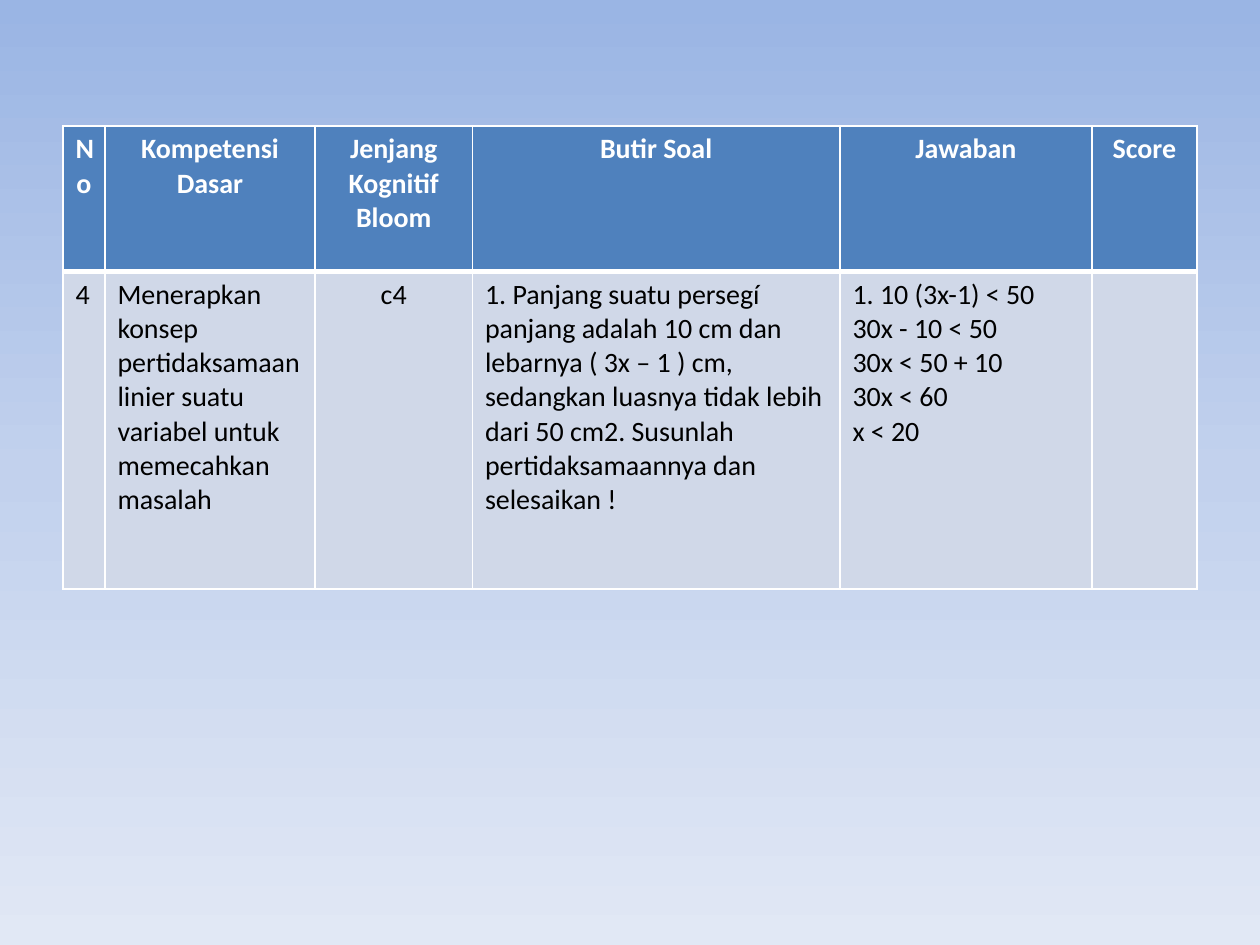
from copy import deepcopy

from lxml import etree
from pptx import Presentation
from pptx.dml.color import RGBColor
from pptx.enum import text
from pptx.oxml import ns
from pptx.util import Pt

WHITE = RGBColor(0xFF, 0xFF, 0xFF)
BLACK = RGBColor(0, 0, 0)
HEADER_BLUE = RGBColor(0x4F, 0x81, 0xBD)
BODY_BLUE = RGBColor(0xD0, 0xD8, 0xE8)
SKY = [
    (0, RGBColor(0x9A, 0xB5, 0xE4)),
    (0.5, RGBColor(0xC2, 0xD1, 0xED)),
    (1, RGBColor(0xE1, 0xE8, 0xF5)),
]

HEADINGS = ["No", "Kompetensi Dasar", "Jenjang Kognitif Bloom",
            "Butir Soal", "Jawaban", "Score"]
QUESTION = [
    "4",
    "Menerapkan konsep pertidaksamaan linier suatu variabel untuk "
    "memecahkan masalah",
    "c4",
    "1. Panjang suatu persegí panjang adalah 10 cm dan lebarnya ( 3x – 1 ) cm,\n"
    "sedangkan luasnya tidak lebih dari 50 cm2. Susunlah pertidaksamaannya dan\n"
    "selesaikan !",
    "1. 10 (3x-1) < 50\n30x - 10 < 50\n30x < 50 + 10\n30x < 60\nx < 20",
    "",
]
BLOOM_COLUMN = 2
COLUMN_WIDTHS = [24, 120, 90, 210, 144, 60]
ROW_HEIGHTS = [83, 181.5]
TABLE_LEFT, TABLE_TOP = 36, 72


def paint_background(slide, stops):
    fill = slide.background.fill
    fill.gradient()
    fill.gradient_angle = 270
    stop_list = slide._element.find(".//" + ns.qn("a:gsLst"))
    while len(stop_list) < len(stops):
        stop_list.append(deepcopy(stop_list[0]))
    for stop, (position, color) in zip(fill.gradient_stops, stops):
        stop.position = position
        stop.color.rgb = color


def draw_borders(cell, color, **widths):
    """Draw the sides L, R, T and B, given in that order, in points."""
    properties = cell._tc.get_or_add_tcPr()
    for side, width in widths.items():
        line = etree.SubElement(properties, ns.qn(f"a:ln{side}"), w=str(Pt(width)))
        solid = etree.SubElement(line, ns.qn("a:solidFill"))
        etree.SubElement(solid, ns.qn("a:srgbClr"), val=str(color))


def write(frame, content, *, color=BLACK, bold=False, centred=False,
          size=16, font="Calibri"):
    frame.text = content
    for paragraph in frame.paragraphs:
        paragraph.alignment = text.PP_ALIGN.CENTER if centred else text.PP_ALIGN.LEFT
        paragraph.font.size = Pt(size)
        for run in paragraph.runs:
            run.font.name = font
            run.font.size = Pt(size)
            run.font.bold = bold
            run.font.color.rgb = color


def add_question_table(slide):
    rows = [HEADINGS, QUESTION]
    table = slide.shapes.add_table(
        len(rows), len(HEADINGS), Pt(TABLE_LEFT), Pt(TABLE_TOP),
        Pt(sum(COLUMN_WIDTHS)), Pt(sum(ROW_HEIGHTS))).table
    for column, width in zip(table.columns, COLUMN_WIDTHS):
        column.width = Pt(width)
    for r, (entries, height) in enumerate(zip(rows, ROW_HEIGHTS)):
        table.rows[r].height = Pt(height)
        header = r == 0
        for c, entry in enumerate(entries):
            cell = table.cell(r, c)
            draw_borders(cell, WHITE, L=1, R=1,
                         T=1 if header else 3, B=3 if header else 1)
            cell.fill.solid()
            cell.fill.fore_color.rgb = HEADER_BLUE if header else BODY_BLUE
            write(cell.text_frame, entry, color=WHITE if header else BLACK,
                  bold=header, centred=header or c == BLOOM_COLUMN)


def main():
    deck = Presentation()
    deck.slide_width, deck.slide_height = Pt(720), Pt(540)
    slide = deck.slides.add_slide(deck.slide_layouts[6])
    paint_background(slide, SKY)
    add_question_table(slide)
    deck.save("out.pptx")


if __name__ == "__main__":
    main()
